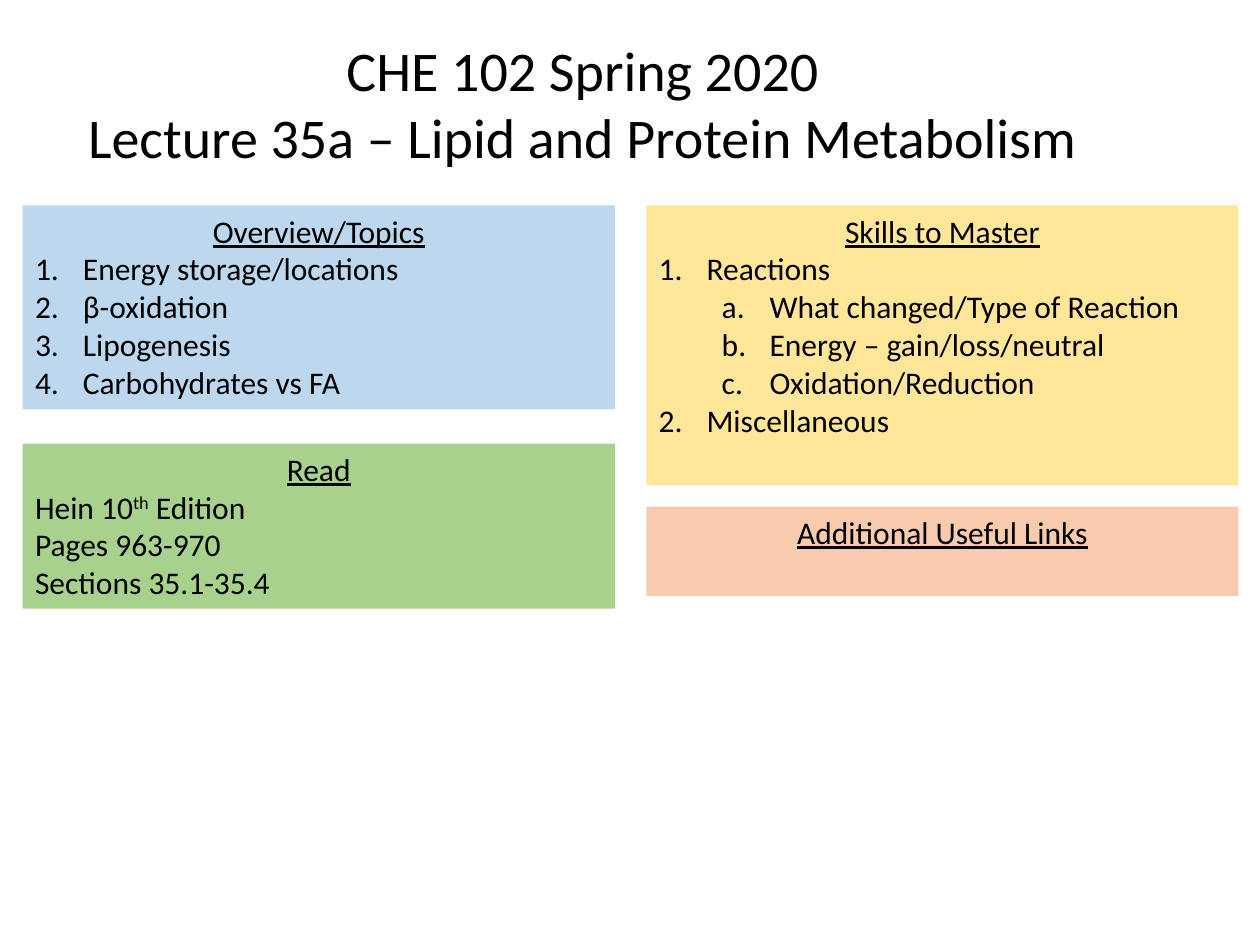
"""Build the overview slide of a chemistry lecture."""
from dataclasses import dataclass

from lxml.etree import SubElement
from pptx import Presentation
from pptx.dml.color import RGBColor
from pptx.enum.text import MSO_ANCHOR, MSO_AUTO_SIZE, PP_ALIGN
from pptx.oxml.ns import qn
from pptx.util import Inches, Pt

FONT = "Calibri"
BLACK = "000000"
LEFT_COLUMN, RIGHT_COLUMN = 0.18, 5.13
PANEL_WIDTH = 4.7
INDENT = 0.38
LEVEL_STEP = 0.5
NUMBERING = ("arabicPeriod", "alphaLcPeriod")
SUPERSCRIPT_MARK = "^"


@dataclass(frozen=True)
class Line:
    text: str
    level: int = 0
    numbered: bool = True


@dataclass(frozen=True)
class Panel:
    left: float
    top: float
    height: float
    fill: str
    heading: str
    lines: tuple[Line, ...] = ()


PANELS = (
    Panel(LEFT_COLUMN, 1.63, 1.62, "BDD7EE", "Overview/Topics", (
        Line("Energy storage/locations"),
        Line("β-oxidation"),
        Line("Lipogenesis"),
        Line("Carbohydrates vs FA"),
    )),
    Panel(RIGHT_COLUMN, 1.63, 2.22, "FFE699", "Skills to Master", (
        Line("Reactions"),
        Line("What changed/Type of Reaction", level=1),
        Line("Energy – gain/loss/neutral", level=1),
        Line("Oxidation/Reduction", level=1),
        Line("Miscellaneous"),
    )),
    Panel(LEFT_COLUMN, 3.52, 1.31, "A9D18E", "Read", (
        Line("Hein 10^th^ Edition", numbered=False),
        Line("Pages 963-970", numbered=False),
        Line("Sections 35.1-35.4", numbered=False),
    )),
    Panel(RIGHT_COLUMN, 4.02, 0.71, "F8CBAD", "Additional Useful Links"),
)


def color(value: str) -> RGBColor:
    return RGBColor.from_string(value)


def format_runs(paragraph, size: int, underline: bool = False) -> None:
    for run in paragraph.runs:
        run.font.name = FONT
        run.font.size = Pt(size)
        run.font.color.rgb = color(BLACK)
        run.font.underline = underline


def number_paragraph(paragraph, level: int) -> None:
    paragraph.level = level
    properties = paragraph._p.get_or_add_pPr()
    properties.set("marL", str(Inches(INDENT + level * LEVEL_STEP)))
    properties.set("indent", str(-Inches(INDENT)))
    SubElement(properties, qn("a:buFont"), typeface="+mj-lt")
    SubElement(properties, qn("a:buAutoNum"), type=NUMBERING[level])


def add_line(text_frame, line: Line) -> None:
    paragraph = text_frame.add_paragraph()
    for index, part in enumerate(line.text.split(SUPERSCRIPT_MARK)):
        run = paragraph.add_run()
        run.text = part
        if index % 2:
            run._r.get_or_add_rPr().set("baseline", "30000")
    format_runs(paragraph, 18)
    if line.numbered:
        number_paragraph(paragraph, line.level)


def add_panel(slide, panel: Panel) -> None:
    shape = slide.shapes.add_textbox(
        Inches(panel.left), Inches(panel.top), Inches(PANEL_WIDTH), Inches(panel.height))
    shape.fill.solid()
    shape.fill.fore_color.rgb = color(panel.fill)
    text_frame = shape.text_frame
    text_frame.word_wrap = True
    text_frame.text = panel.heading
    heading = text_frame.paragraphs[0]
    heading.alignment = PP_ALIGN.CENTER
    format_runs(heading, 18, underline=True)
    for line in panel.lines:
        add_line(text_frame, line)


def set_title(slide, text: str) -> None:
    title = slide.shapes.title
    title.left, title.top = Inches(0.56), Inches(0.23)
    title.width, title.height = Inches(8.13), Inches(1.18)
    text_frame = title.text_frame
    text_frame.text = text
    text_frame.word_wrap = False
    text_frame.auto_size = MSO_AUTO_SIZE.NONE
    text_frame.vertical_anchor = MSO_ANCHOR.TOP
    for paragraph in text_frame.paragraphs:
        paragraph.alignment = PP_ALIGN.CENTER
        format_runs(paragraph, 32)


def main() -> None:
    presentation = Presentation()
    presentation.slide_width, presentation.slide_height = Inches(10), Inches(7.5)
    slide = presentation.slides.add_slide(presentation.slide_layouts[5])
    for panel in PANELS:
        add_panel(slide, panel)
    set_title(slide, "CHE 102 Spring 2020\nLecture 35a – Lipid and Protein Metabolism")
    presentation.save("out.pptx")


if __name__ == "__main__":
    main()
